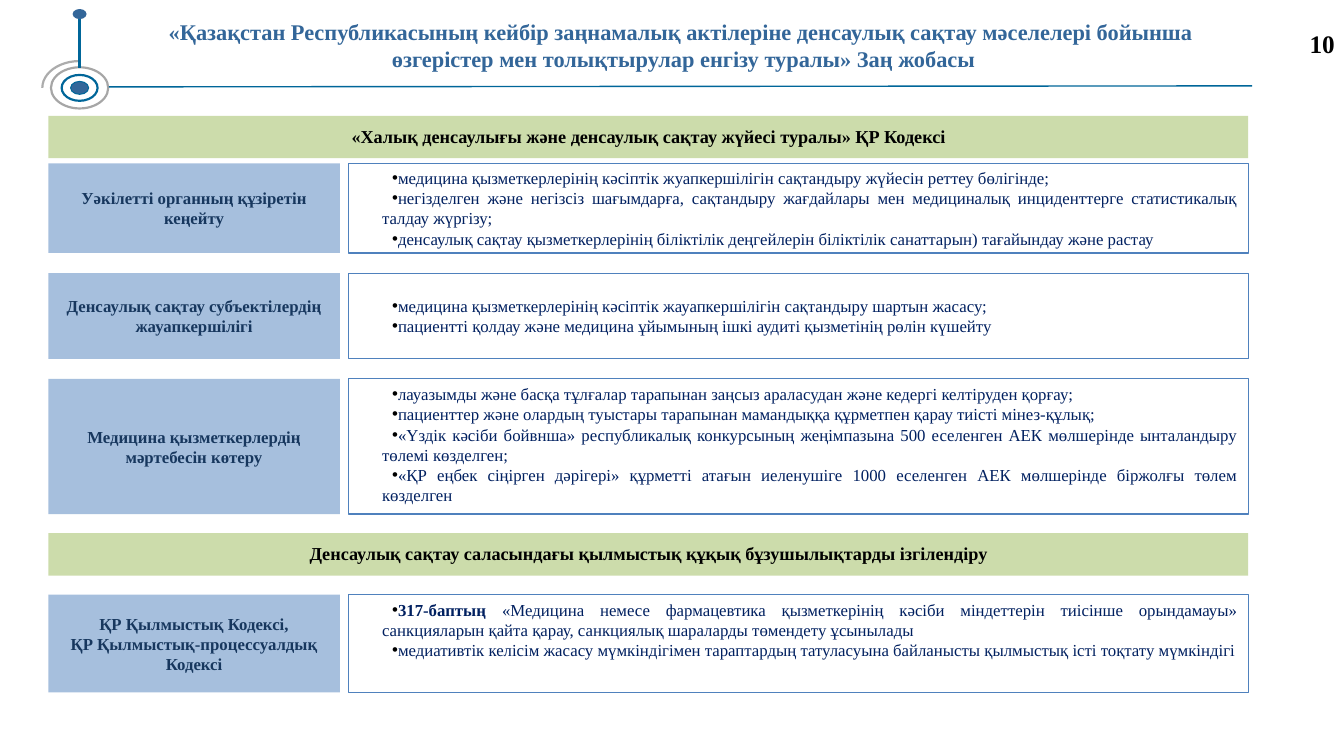
from lxml.etree import SubElement as Sub
from pptx import Presentation
from pptx.dml.color import RGBColor
from pptx.enum.shapes import MSO_CONNECTOR as Link, MSO_SHAPE as Kind
from pptx.enum.text import MSO_ANCHOR as Anchor, MSO_AUTO_SIZE as Fit, PP_ALIGN as Align
from pptx.oxml.ns import qn
from pptx.util import Inches, Pt

WIDE, HIGH = 13.33, 7.5
LEFT, SPAN, SIDE, GUT = 0.48, 11.9, 2.89, 0.09
NAVY, TEAL, BLUE, GREEN = "336699", "006699", "4F81BD", "9BBB59"
HEAD = ("«Қазақстан Республикасының кейбір заңнамалық актілеріне денсаулық сақтау мәселелері бойынша "
        "\vөзгерістер мен толықтырулар енгізу туралы» Заң жобасы")
ROWS = [
    (0.42, 0.05, "«Халық денсаулығы және денсаулық сақтау жүйесі туралы» ҚР Кодексі", None, Anchor.MIDDLE),
    (0.89, 0.2, "Уәкілетті органның құзіретін кеңейту", [
        "медицина қызметкерлерінің кәсіптік жуапкершілігін сақтандыру жүйесін реттеу бөлігінде;",
        "негізделген және негізсіз шағымдарға, сақтандыру жағдайлары мен медициналық инциденттерге "
        "статистикалық талдау жүргізу;",
        "денсаулық сақтау қызметкерлерінің біліктілік деңгейлерін біліктілік санаттарын) "
        "тағайындау және растау"], Anchor.MIDDLE),
    (0.85, 0.2, "Денсаулық сақтау субъектілердің жауапкершілігі", [
        "медицина қызметкерлерінің кәсіптік жауапкершілігін сақтандыру шартын жасасу;",
        "пациентті қолдау және медицина ұйымының ішкі аудиті қызметінің рөлін күшейту"], Anchor.MIDDLE),
    (1.34, 0.19, "Медицина қызметкерлердің мәртебесін көтеру", [
        "лауазымды және басқа тұлғалар тарапынан заңсыз араласудан және кедергі келтіруден қорғау;",
        "пациенттер және олардың туыстары тарапынан мамандыққа құрметпен қарау тиісті мінез-құлық;",
        "«Үздік кәсіби бойвнша» республикалық конкурсының жеңімпазына 500 еселенген АЕК мөлшерінде "
        "ынталандыру төлемі көзделген;",
        "«ҚР еңбек сіңірген дәрігері» құрметті атағын иеленушіге 1000 еселенген АЕК мөлшерінде "
        "біржолғы төлем көзделген"], Anchor.TOP),
    (0.42, 0.19, "Денсаулық сақтау саласындағы қылмыстық құқық бұзушылықтарды ізгілендіру", None, Anchor.MIDDLE),
    (0.97, 0, "ҚР Қылмыстық Кодексі,\nҚР Қылмыстық-процессуалдық Кодексі", [
        "317-баптың |«Медицина немесе фармацевтика қызметкерінің кәсіби міндеттерін тиісінше "
        "орындамауы» санкцияларын қайта қарау, санкциялық шараларды төмендету ұсынылады",
        "медиативтік келісім жасасу мүмкіндігімен тараптардың татуласуына байланысты қылмыстық істі "
        "тоқтату мүмкіндігі"], Anchor.TOP),
]


def paint(tone):
    """Turn a hex string into a colour."""
    return RGBColor.from_string(tone)


def dot(par):
    """Give a paragraph a black bullet and a first-line indent."""
    prop = par._p.get_or_add_pPr()
    prop.set("marL", "0")
    prop.set("indent", str(Inches(0.1)))
    Sub(Sub(prop, qn("a:buClr")), qn("a:srgbClr"), val="000000")
    Sub(prop, qn("a:buFont"), typeface="Arial")
    Sub(prop, qn("a:buChar"), char="•")


def write(shape, text, size=12, tone="000000", bold=True, align=Align.CENTER,
          anchor=Anchor.MIDDLE, space=None, list_=False, wrap=True, inset=0.1):
    """Fill a shape with text; a part before a bar is bold."""
    frame = shape.text_frame
    frame.word_wrap, frame.auto_size, frame.vertical_anchor = wrap, Fit.NONE, anchor
    frame.margin_left = Inches(inset)
    for num, line in enumerate(text.split("\n")):
        par = frame.add_paragraph() if num else frame.paragraphs[0]
        par.alignment, par.line_spacing = align, space
        if list_:
            dot(par)
        lead, _, rest = line.rpartition("|")
        for part, heavy in ((lead, True), (rest, bold)):
            for place, piece in enumerate(part.split("\v") if part else []):
                if place:
                    par.add_line_break()
                run = par.add_run()
                run.text = piece
                font = run.font
                font.name, font.size, font.bold = "Times New Roman", Pt(size), heavy
                font.color.rgb = paint(tone)


def draw(slide, kind, box, fill=None, line=None, width=0.75, alpha=None):
    """Add a preset shape with its fill and line."""
    shape = slide.shapes.add_shape(kind, *map(Inches, box))
    shape.shadow.inherit = False
    if fill:
        shape.fill.solid()
        shape.fill.fore_color.rgb = paint(fill)
        if alpha:
            hue = shape._element.spPr.find(qn("a:solidFill"))[0]
            Sub(hue, qn("a:alpha"), val=str(alpha * 1000))
    else:
        shape.fill.background()
    if line:
        shape.line.color.rgb = paint(line)
        shape.line.width = Pt(width)
    else:
        shape.line.fill.background()
    return shape


def rule(slide, ends, width):
    """Add a straight teal line."""
    line = slide.shapes.add_connector(Link.STRAIGHT, *map(Inches, ends))
    line.line.color.rgb = paint(TEAL)
    line.line.width = Pt(width)
    Sub(line._element.spPr, qn("a:effectLst"))


def emblem(slide, box):
    """Draw the pin over its rings and the rule beside them."""
    x, y, w, h = box
    mid, low, top = x + 0.56 * w, y + 0.79 * h, y + 0.05 * h

    def ring(kind, share, level, *look):
        """Centre a flat oval on the pin."""
        wide = share * w
        tall = 0.72 * wide
        return draw(slide, kind, (mid - wide / 2, level - tall / 2, wide, tall), *look)

    arc = ring(Kind.ARC, 1.12, low, None, "ACACAC", 1.56)
    arc.adjustments[0], arc.adjustments[1] = 108, 162
    ring(Kind.OVAL, 0.27, low, NAVY, TEAL)
    ring(Kind.OVAL, 0.54, low, None, TEAL, 1.56)
    ring(Kind.OVAL, 0.86, low, None, "A6A6A6", 1.56)
    rule(slide, (mid, top, mid, low - 0.2 * h), 1.56)
    ring(Kind.OVAL, 0.21, top, NAVY)
    rule(slide, (x + w, low - 0.01, 12.42, low - 0.02), 1)


def header(slide, box):
    """Place the title and the page number."""
    title = slide.shapes.title
    title.left, title.top, title.width, title.height = map(Inches, box)
    write(title, HEAD, size=16, tone=NAVY)
    page = slide.shapes.add_textbox(*map(Inches, (12.89, 0.23, 0.45, 0.4)))
    write(page, "10", size=18, align=Align.LEFT, anchor=Anchor.TOP, wrap=False)


def band(slide, box, text):
    """Draw a green section band."""
    bar = draw(slide, Kind.RECTANGLE, box, GREEN, alpha=50)
    write(bar, text, size=13, space=0.9)


def pair(slide, box, name, lines, anchor):
    """Draw a blue label and its framed list."""
    x, y, w, h = box
    label = draw(slide, Kind.RECTANGLE, (x, y, SIDE, h), BLUE, alpha=50)
    write(label, name, tone="17375E")
    skip = SIDE + GUT
    panel = draw(slide, Kind.RECTANGLE, (x + skip, y, w - skip, h), line=BLUE)
    write(panel, "\n".join(lines), tone="002060", bold=False, align=Align.JUSTIFY,
          anchor=anchor, list_=True, inset=0.33)


def main():
    """Build the slide and save it."""
    deck = Presentation()
    deck.slide_width, deck.slide_height = Inches(WIDE), Inches(HIGH)
    slide = deck.slides.add_slide(deck.slide_layouts[5])
    header(slide, (1.18, 0.05, 11.2, 0.79))
    emblem(slide, (0.42, 0.09, 0.66, 0.99))
    top = 1.15
    for high, gap, name, lines, anchor in ROWS:
        box = (LEFT, top, SPAN, high)
        if lines:
            pair(slide, box, name, lines, anchor)
        else:
            band(slide, box, name)
        top += high + gap
    deck.save("out.pptx")


if __name__ == "__main__":
    main()
